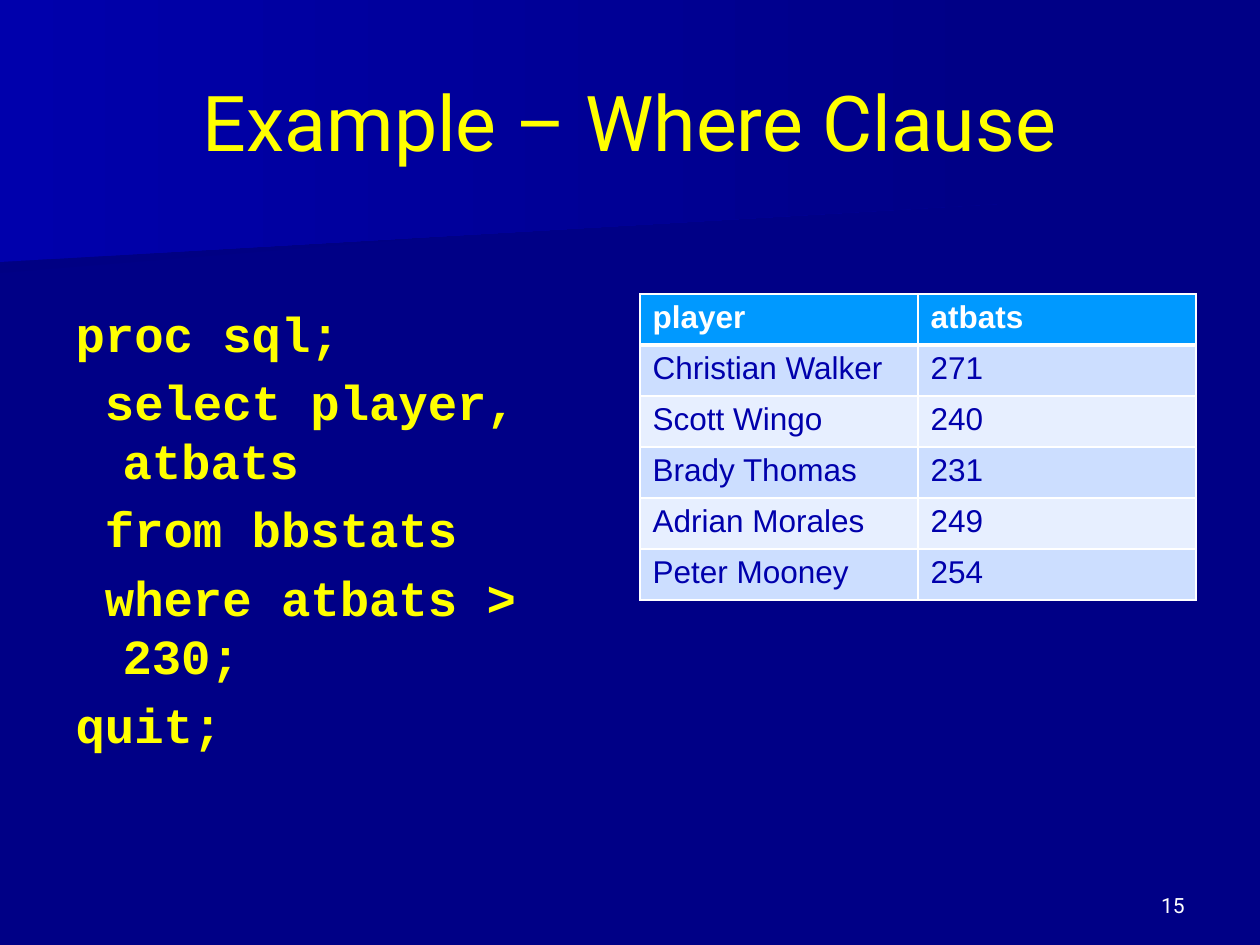
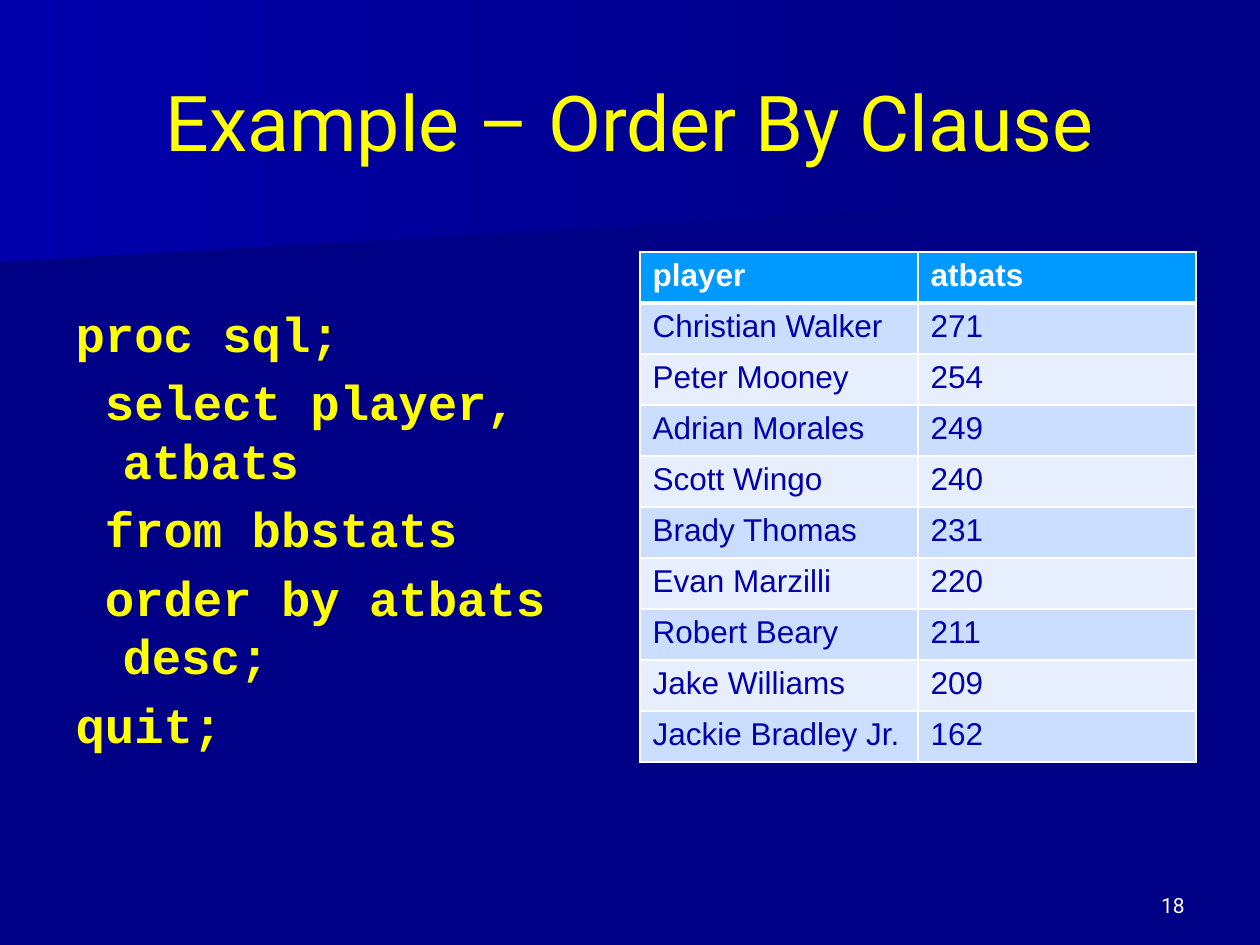
from dataclasses import dataclass
from typing import NamedTuple

import lxml.etree
import pptx
import pptx.dml.color
import pptx.enum.text
import pptx.oxml.ns
import pptx.util

ALIGN = pptx.enum.text.PP_ALIGN
ANCHOR = pptx.enum.text.MSO_ANCHOR

EMU_PER_PX = 914400 / 126
NAVY, ROYAL, DEEP = "000086", "0000AC", "000083"
YELLOW, WHITE = "FFFF00", "FFFFFF"
HEADER_FILL, ROW_FILLS = "0099FF", ("CCDEFF", "E7EFFF")

TABLE_LEFT, COLUMN_WIDTH, ROW_HEIGHT = 640, 278, 51
HANGING = 47
THIN, THICK = 1, 3


class Box(NamedTuple):
    left: int
    top: int
    width: int
    height: int


class Band(NamedTuple):
    start_color: str
    points: tuple[tuple[int, int], ...]


@dataclass
class Example:
    title: str
    last_clause: str
    table_top: int
    players: list[tuple[str, int]]
    number: int


TITLE_BOX = Box(63, 42, 1134, 158)
CODE_BOX = Box(63, 297, 557, 543)
NUMBER_BOX = Box(903, 861, 294, 63)

BANDS = (
    Band(DEEP, ((980, 193), (0, 273), (0, 127), (982, 127), (980, 161))),
    Band(ROYAL, ((998, 204), (0, 262), (0, 0), (998, 0))),
)

EXAMPLES = (
    Example(
        "Example – Where Clause", " where atbats > 230;", 294,
        [("Christian Walker", 271), ("Scott Wingo", 240), ("Brady Thomas", 231),
         ("Adrian Morales", 249), ("Peter Mooney", 254)],
        15,
    ),
    Example(
        "Example – Order By Clause", " order by atbats desc;", 252,
        [("Christian Walker", 271), ("Peter Mooney", 254), ("Adrian Morales", 249),
         ("Scott Wingo", 240), ("Brady Thomas", 231), ("Evan Marzilli", 220),
         ("Robert Beary", 211), ("Jake Williams", 209), ("Jackie Bradley Jr.", 162)],
        18,
    ),
)


def px(length: int) -> int:
    return round(length * EMU_PER_PX)


def rgb(color: str) -> pptx.dml.color.RGBColor:
    return pptx.dml.color.RGBColor.from_string(color)


def place(sp, box: Box) -> None:
    sp.left, sp.top, sp.width, sp.height = map(px, box)


def write(p, text: str, *, font: str, size: int, color: str,
          bold: bool = False, align=ALIGN.LEFT) -> None:
    p.alignment = align
    r = p.add_run()
    r.text = text
    r.font.name = font
    r.font.size = pptx.util.Pt(size)
    r.font.bold = bold
    r.font.color.rgb = rgb(color)


def add_bands(slide) -> None:
    """Draw the gradient bands behind everything else on the slide."""
    for i, band in enumerate(BANDS):
        builder = slide.shapes.build_freeform(*band.points[0], scale=EMU_PER_PX)
        builder.add_line_segments(band.points[1:], close=True)
        sp = builder.convert_to_shape()
        sp.shadow.inherit = False
        sp.line.fill.background()
        sp.fill.gradient()
        sp.fill.gradient_angle = 0
        for stop, color, position in zip(sp.fill.gradient_stops,
                                         (band.start_color, NAVY), (0, 1)):
            stop.color.rgb = rgb(color)
            stop.position = position
        slide.shapes.element.insert(2 + i, sp.element)


def add_title(slide, text: str) -> None:
    sp = slide.shapes.title
    place(sp, TITLE_BOX)
    tf = sp.text_frame
    tf.auto_size = pptx.enum.text.MSO_AUTO_SIZE.NONE
    tf.vertical_anchor = ANCHOR.MIDDLE
    write(tf.paragraphs[0], text, font="Roboto", size=44, color=YELLOW,
          align=ALIGN.CENTER)


def add_code(slide, lines: list[str]) -> None:
    sp = slide.placeholders[1]
    place(sp, CODE_BOX)
    tf = sp.text_frame
    tf.auto_size = pptx.enum.text.MSO_AUTO_SIZE.NONE
    for i, line in enumerate(lines):
        p = tf.add_paragraph() if i else tf.paragraphs[0]
        properties = p._p.get_or_add_pPr()
        properties.set("marL", str(px(HANGING)))
        properties.set("indent", str(-px(HANGING)))
        lxml.etree.SubElement(properties, pptx.oxml.ns.qn("a:buNone"))
        p.line_spacing = pptx.util.Pt(33.5)
        p.space_before = pptx.util.Pt(5.6 if i else 0)
        write(p, line, font="Courier New", size=28, color=YELLOW, bold=True)


def set_borders(cell, top: int, bottom: int) -> None:
    properties = cell._tc.get_or_add_tcPr()
    widths = {"lnL": THIN, "lnR": THIN, "lnT": top, "lnB": bottom}
    for i, (side, width) in enumerate(widths.items()):
        line = lxml.etree.Element(pptx.oxml.ns.qn(f"a:{side}"),
                                  w=str(pptx.util.Pt(width)))
        fill = lxml.etree.SubElement(line, pptx.oxml.ns.qn("a:solidFill"))
        lxml.etree.SubElement(fill, pptx.oxml.ns.qn("a:srgbClr"), val=WHITE)
        properties.insert(i, line)


def add_player_table(slide, top: int, players: list[tuple[str, int]]) -> None:
    rows = [("player", "atbats"), *players]
    box = Box(TABLE_LEFT, top, 2 * COLUMN_WIDTH, len(rows) * ROW_HEIGHT)
    table = slide.shapes.add_table(len(rows), 2, *map(px, box)).table
    for i, row in enumerate(rows):
        table.rows[i].height = px(ROW_HEIGHT)
        header = i == 0
        for j, value in enumerate(row):
            cell = table.cell(i, j)
            cell.fill.solid()
            cell.fill.fore_color.rgb = rgb(HEADER_FILL if header
                                           else ROW_FILLS[(i - 1) % 2])
            set_borders(cell, top=THICK if i == 1 else THIN,
                        bottom=THICK if header else THIN)
            write(cell.text_frame.paragraphs[0], str(value), font="Arial", size=18,
                  color=WHITE if header else ROYAL, bold=header)


def add_number(slide, number: int) -> None:
    tf = slide.shapes.add_textbox(*map(px, NUMBER_BOX)).text_frame
    tf.word_wrap = True
    tf.vertical_anchor = ANCHOR.BOTTOM
    write(tf.paragraphs[0], str(number), font="Roboto", size=12, color=WHITE,
          align=ALIGN.RIGHT)


def add_example(prs, example: Example) -> None:
    slide = prs.slides.add_slide(prs.slide_layouts[1])
    add_bands(slide)
    add_title(slide, example.title)
    add_code(slide, ["proc sql;", " select player, atbats", " from bbstats",
                     example.last_clause, "quit;"])
    add_player_table(slide, example.table_top, example.players)
    add_number(slide, example.number)


def main() -> None:
    prs = pptx.Presentation()
    prs.slide_width, prs.slide_height = px(1260), px(945)
    background = prs.slide_master.background.fill
    background.solid()
    background.fore_color.rgb = rgb(NAVY)
    for example in EXAMPLES:
        add_example(prs, example)
    prs.save("out.pptx")


if __name__ == "__main__":
    main()
